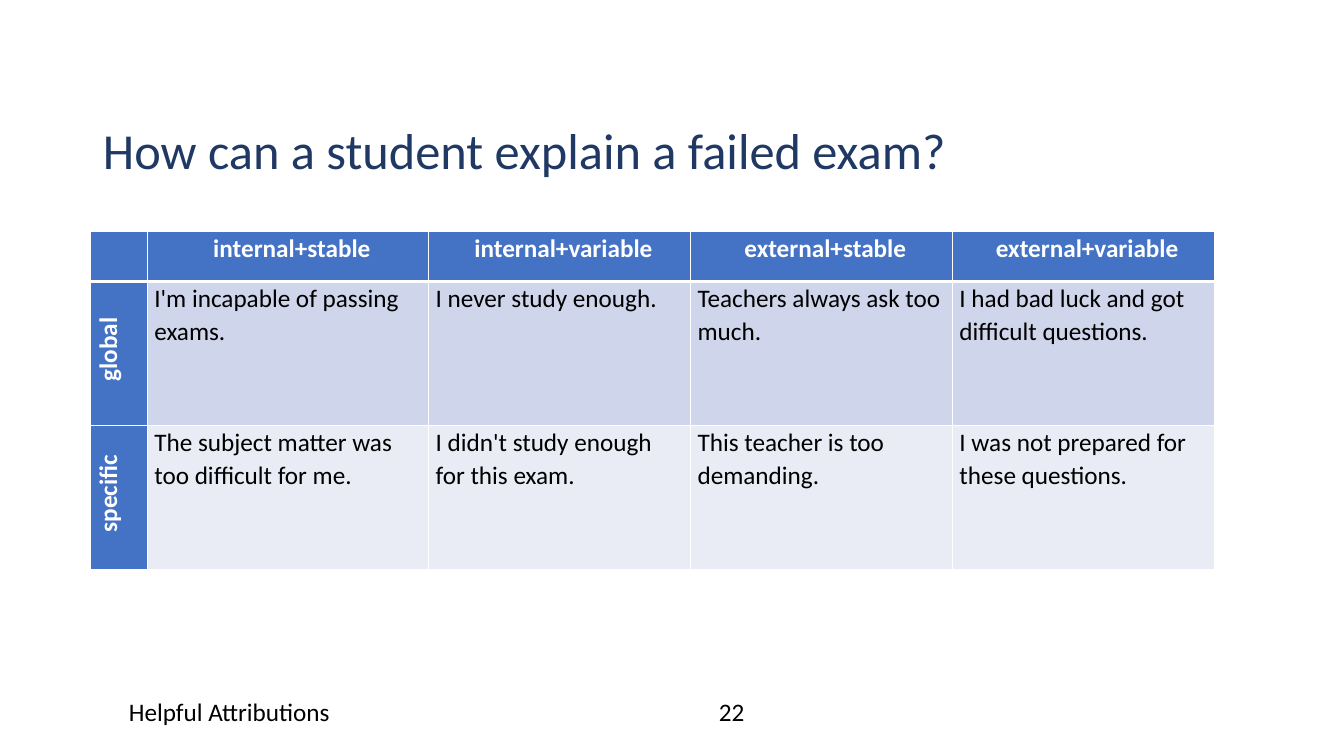
from dataclasses import dataclass

from lxml.etree import SubElement
from pptx import Presentation
from pptx.dml.color import RGBColor
from pptx.enum.text import MSO_ANCHOR as Anchor, PP_ALIGN as Align
from pptx.oxml.ns import qn
from pptx.util import Cm, Pt


@dataclass(frozen=True)
class Theme:
    font: str = "Calibri"
    title_size: int = 36
    body_size: int = 18
    title: str = "203864"
    text: str = "000000"
    white: str = "FFFFFF"
    header: str = "4472C4"
    bands: tuple[str, str] = ("CFD5EA", "E9EBF5")


@dataclass(frozen=True)
class Label:
    text: str
    left: float
    width: float
    align: Align


@dataclass(frozen=True)
class Scope:
    name: str
    explanations: tuple[str, ...]


THEME = Theme()
CAUSES = ("internal+stable", "internal+variable", "external+stable", "external+variable")
SCOPES = (
    Scope("global", (
        "I'm incapable of passing exams.",
        "I never study enough.",
        "Teachers always ask too much.",
        "I had bad luck and got difficult questions.",
    )),
    Scope("specific", (
        "The subject matter was too difficult for me.",
        "I didn't study enough for this exam.",
        "This teacher is too demanding.",
        "I was not prepared for these questions.",
    )),
)
FOOTERS = (
    Label("Helpful Attributions", 3, 11.43, Align.LEFT),
    Label("22", 14.63, 7.62, Align.CENTER),
)
COLUMN_WIDTHS = (1.42, 7.09, 6.6, 6.6, 6.6)
ROW_HEIGHTS = (1.27, 3.63, 3.63)


def format_paragraph(p, size: int, color: str, bold: bool = False) -> None:
    p.font.name = THEME.font
    p.font.size = Pt(size)
    p.font.bold = bold
    p.font.color.rgb = RGBColor.from_string(color)


def add_border(tc_pr, side: str, points: float) -> None:
    ln = SubElement(tc_pr, qn(f"a:ln{side}"), w=str(Pt(points)))
    SubElement(SubElement(ln, qn("a:solidFill")), qn("a:srgbClr"), val=THEME.white)


def fill_cell(cell, text: str, row: int, col: int) -> None:
    is_header = row == 0 or col == 0
    tc_pr = cell._tc.get_or_add_tcPr()
    # The line under the header row is heavier than the others.
    for side, heavy_row in (("L", None), ("R", None), ("T", 1), ("B", 0)):
        add_border(tc_pr, side, 3 if row == heavy_row else 1)
    cell.fill.solid()
    color = THEME.header if is_header else THEME.bands[row - 1]
    cell.fill.fore_color.rgb = RGBColor.from_string(color)
    cell.margin_left = cell.margin_right = Cm(0.18)
    cell.margin_top = cell.margin_bottom = 0
    if row and not col:
        tc_pr.set("vert", "vert270")

    p = cell.text_frame.paragraphs[0]
    p.text = text
    p.line_spacing = 1.07
    if is_header:
        p.alignment = Align.CENTER
        p._p.get_or_add_pPr().set("marL", str(Cm(0.2)))
    format_paragraph(p, THEME.body_size, THEME.white if is_header else THEME.text, is_header)


def add_attribution_table(s) -> None:
    rows = (("", *CAUSES), *((scope.name, *scope.explanations) for scope in SCOPES))
    frame = s.shapes.add_table(
        len(rows), len(COLUMN_WIDTHS), Cm(2.29), Cm(5.82),
        Cm(sum(COLUMN_WIDTHS)), Cm(sum(ROW_HEIGHTS)),
    )
    table = frame.table
    table.first_col = True
    for column, width in zip(table.columns, COLUMN_WIDTHS):
        column.width = Cm(width)
    for r, (height, texts) in enumerate(zip(ROW_HEIGHTS, rows)):
        table.rows[r].height = Cm(height)
        for c, text in enumerate(texts):
            fill_cell(table.cell(r, c), text, r, c)


def add_footer(s, label: Label) -> None:
    sp = s.shapes.add_textbox(Cm(label.left), Cm(17.42), Cm(label.width), Cm(1.02))
    sp.text_frame.word_wrap = True
    p = sp.text_frame.paragraphs[0]
    p.text = label.text
    p.alignment = label.align
    format_paragraph(p, THEME.body_size, THEME.text)


def format_title(s, text: str) -> None:
    sp = s.shapes.title
    sp.left, sp.top, sp.width, sp.height = Cm(2.34), Cm(3.05), Cm(29.21), Cm(2.46)
    tf = sp.text_frame
    tf.vertical_anchor = Anchor.TOP
    p = tf.paragraphs[0]
    p.text = text
    p.alignment = Align.LEFT
    p.line_spacing = 0.9
    format_paragraph(p, THEME.title_size, THEME.title)


def main() -> None:
    prs = Presentation()
    prs.slide_width, prs.slide_height = Cm(33.87), Cm(19.05)
    s = prs.slides.add_slide(prs.slide_layouts.get_by_name("Title Only"))
    format_title(s, "How can a student explain a failed exam?")
    add_attribution_table(s)
    for label in FOOTERS:
        add_footer(s, label)
    prs.save("out.pptx")


if __name__ == "__main__":
    main()
